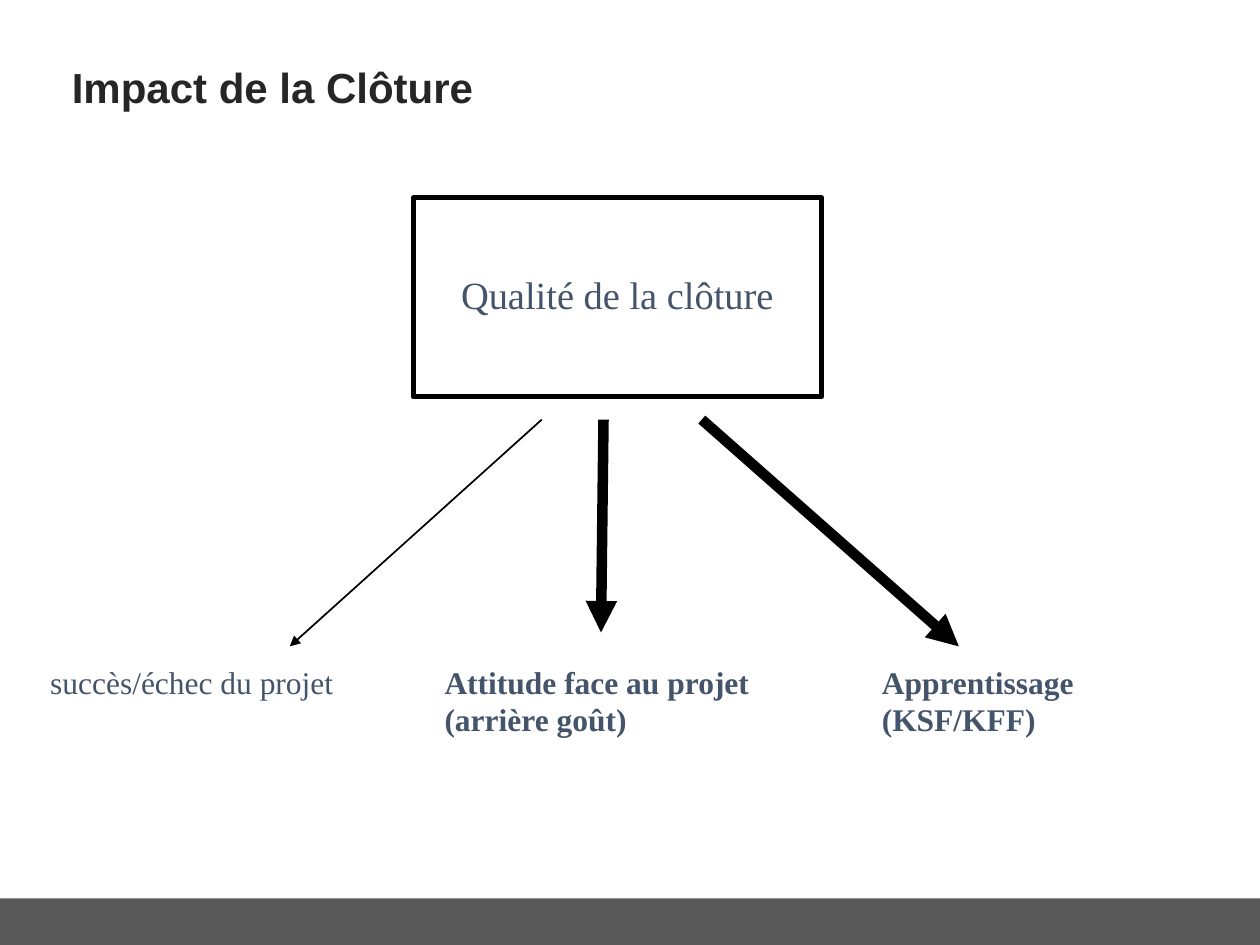
from lxml import etree
from pptx import Presentation
from pptx.dml.color import RGBColor
from pptx.enum.shapes import MSO_CONNECTOR, MSO_SHAPE
from pptx.enum.text import MSO_ANCHOR, PP_ALIGN
from pptx.oxml.ns import qn
from pptx.util import Inches, Pt

# Content
TITLE = "Impact de la Clôture"
CAUSE = "Qualité de la clôture"
# Each effect: paragraphs, bold, text box (left, width, height), arrow (start, end, weight)
EFFECTS = [
    (["succès/échec du projet"], False, (0.3, 2.81, 0.4), ((4.3, 3.33), (2.3, 5.13), 1)),
    (["Attitude face au projet (arrière goût)"], True, (3.43, 2.94, 0.71),
     ((4.79, 3.33), (4.77, 5.02), 6)),
    (["Apprentissage", "(KSF/KFF)"], True, (6.9, 2.29, 0.71),
     ((5.57, 3.33), (7.61, 5.13), 6)),
]
EFFECT_TOP = 5.21

THEME = {
    "title": {"name": "Arial", "size": Pt(24), "bold": True, "color": "262626"},
    "cause": {"name": "Times New Roman", "size": Pt(22), "bold": False, "color": "44546A"},
    "effect": {"name": "Times New Roman", "size": Pt(18), "bold": False, "color": "44546A"},
    "line": "000000",
    "footer": "595959",
}


def rgb(value):
    return RGBColor.from_string(value)


def write(tf, lines, style, align=PP_ALIGN.LEFT, anchor=MSO_ANCHOR.TOP):
    tf.word_wrap = True
    tf.vertical_anchor = anchor
    for i, line in enumerate(lines):
        p = tf.paragraphs[0] if i == 0 else tf.add_paragraph()
        p.alignment = align
        r = p.add_run()
        r.text = line
        for key, value in style.items():
            if key == "color":
                r.font.color.rgb = rgb(value)
            else:
                setattr(r.font, key, value)


def add_box(slide, box):
    sp = slide.shapes.add_shape(MSO_SHAPE.RECTANGLE, *map(Inches, box))
    sp.shadow.inherit = False
    return sp


def add_arrow(slide, start, end, weight):
    cx = slide.shapes.add_connector(MSO_CONNECTOR.STRAIGHT, *map(Inches, start + end))
    cx.line.color.rgb = rgb(THEME["line"])
    cx.line.width = Pt(weight)
    etree.SubElement(cx.line._get_or_add_ln(), qn("a:tailEnd"), type="triangle")
    etree.SubElement(cx._element.spPr, qn("a:effectLst"))


prs = Presentation()
prs.slide_width, prs.slide_height = Inches(10), Inches(7.5)
slide = prs.slides.add_slide(prs.slide_layouts[5])

# Footer band
band = add_box(slide, (0, 7.13, 10, 0.37))
band.fill.solid()
band.fill.fore_color.rgb = rgb(THEME["footer"])
band.line.fill.background()

# Title
title = slide.shapes.title
title.left, title.top, title.width, title.height = map(Inches, (0.47, 0.41, 8.47, 0.56))
write(title.text_frame, [TITLE], THEME["title"], anchor=MSO_ANCHOR.MIDDLE)

# Cause box
cause = add_box(slide, (3.28, 1.57, 3.24, 1.58))
cause.fill.background()
cause.line.color.rgb = rgb(THEME["line"])
cause.line.width = Pt(3)
cause.text_frame.margin_bottom = Inches(0.1)
write(cause.text_frame, [CAUSE], THEME["cause"], PP_ALIGN.CENTER, MSO_ANCHOR.MIDDLE)

# Effects and their arrows
for lines, bold, (left, width, height), arrow in EFFECTS:
    add_arrow(slide, *arrow)
    tb = slide.shapes.add_textbox(*map(Inches, (left, EFFECT_TOP, width, height)))
    write(tb.text_frame, lines, {**THEME["effect"], "bold": bold})

prs.save("out.pptx")
